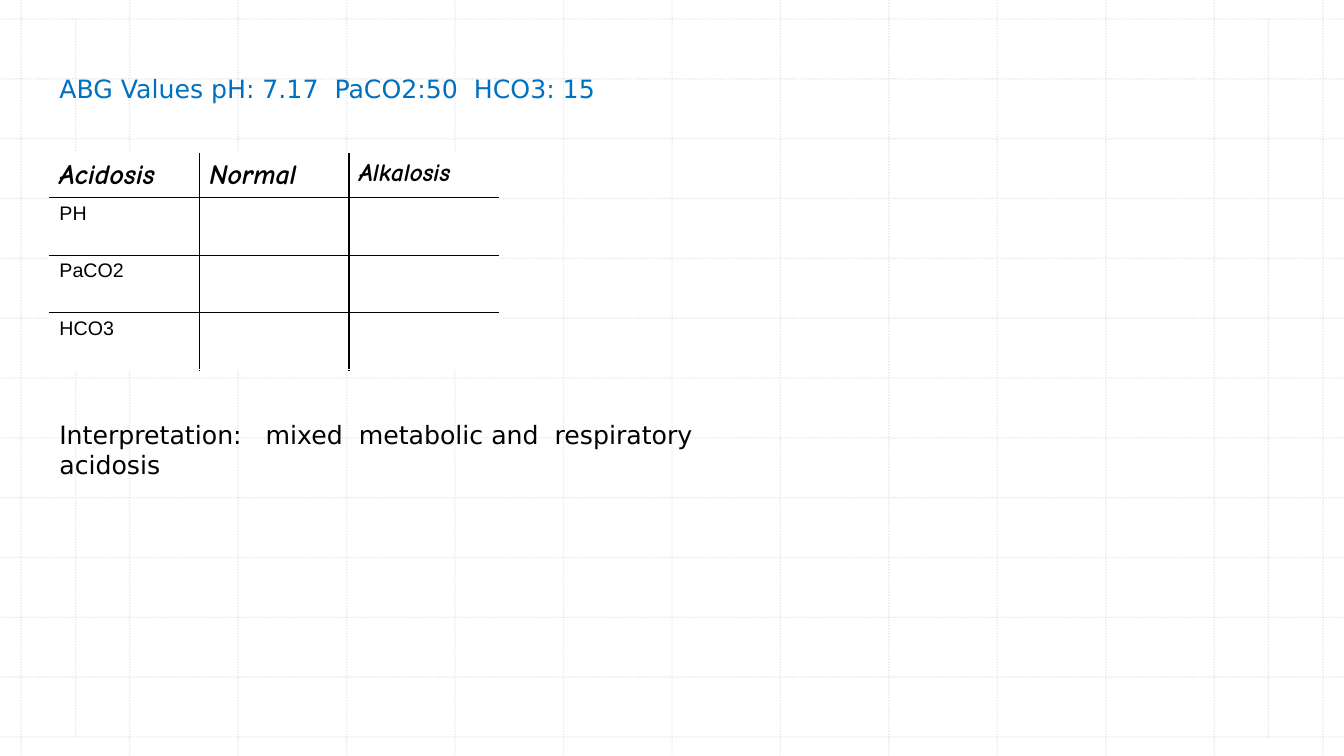
from dataclasses import dataclass

from lxml.etree import SubElement
from pptx import Presentation
from pptx.dml.color import RGBColor
from pptx.enum.dml import MSO_LINE
from pptx.enum.shapes import MSO_CONNECTOR
from pptx.enum.text import MSO_AUTO_SIZE
from pptx.oxml import parse_xml
from pptx.oxml.ns import nsdecls, qn
from pptx.util import Pt


@dataclass(frozen=True)
class Theme:
    """Colours, type styles and line weight of the slide."""
    paper: str = "FFFFFF"
    ink: str = "000000"
    accent: str = "0070C0"
    grid: str = "BCBCBC"
    grid_alpha: str = "30000"
    rule: float = 1

    def statement(self):
        """Return the format of the two lines of running text."""
        return {"name": "DejaVu Sans", "size": Pt(18)}

    def heading(self, size):
        """Return the format of a column heading."""
        return {"name": "Comic Neue", "size": Pt(size), "bold": True, "italic": True}

    def label(self):
        """Return the format of a row label."""
        return {"name": "Arial", "size": Pt(14), "bold": False, "italic": False}


THEME = Theme()
SLIDE_WIDTH, SLIDE_HEIGHT = 960, 540


def write(paragraph, words, formats, colour):
    """Add one formatted run to a paragraph."""
    run = paragraph.add_run()
    run.text = words
    for attribute, value in formats.items():
        setattr(run.font, attribute, value)
    run.font.color.rgb = RGBColor.from_string(colour)


def draw_grid_line(slide, start_x, start_y, end_x, end_y):
    """Draw one faint dotted line of the background grid."""
    grid_line = slide.shapes.add_connector(
        MSO_CONNECTOR.STRAIGHT, Pt(start_x), Pt(start_y), Pt(end_x), Pt(end_y))
    grid_line.line.color.rgb = RGBColor.from_string(THEME.grid)
    for attribute, value in {"width": Pt(THEME.rule), "dash_style": MSO_LINE.ROUND_DOT}.items():
        setattr(grid_line.line, attribute, value)
    properties = grid_line._element.spPr
    SubElement(properties.find(".//" + qn("a:srgbClr")), qn("a:alpha"), val=THEME.grid_alpha)
    SubElement(properties, qn("a:effectLst"))


def draw_grid(slide, left, top, width, height):
    """Fill a box with the background grid and its two inner margins."""
    edge_x, edge_y, margin, steps = 15.12, 13.6, 54, 12
    step_x = (width - 2 * edge_x) / steps
    step_y = (height - 2 * edge_y) / steps
    right, bottom = left + width, top + height
    for step in range(steps + 1):
        column_x = left + edge_x + step * step_x
        row_y = top + edge_y + step * step_y
        draw_grid_line(slide, column_x, top, column_x, bottom)
        draw_grid_line(slide, left, row_y, right, row_y)
    for margin_x in (left + margin, right - margin):
        draw_grid_line(slide, margin_x, top + edge_y, margin_x, bottom - edge_y)


def add_statement(slide, left, top, width, height, words, colour):
    """Place a line of running text in its box."""
    statement = slide.shapes.add_textbox(Pt(left), Pt(top), Pt(width), Pt(height))
    frame = statement.text_frame
    for attribute, value in {"word_wrap": True, "auto_size": MSO_AUTO_SIZE.SHAPE_TO_FIT_TEXT}.items():
        setattr(frame, attribute, value)
    write(frame.paragraphs[0], words, THEME.statement(), colour)


def rule_cell(cell, outer_sides):
    """Fill a cell and rule it, with outer sides in the paper colour."""
    cell.fill.solid()
    cell.fill.fore_color.rgb = RGBColor.from_string(THEME.paper)
    properties = cell._tc.get_or_add_tcPr()
    for position, side in enumerate("LRTB"):
        colour = THEME.paper if side in outer_sides else THEME.ink
        properties.insert(position, parse_xml(
            f'<a:ln{side} {nsdecls("a")} w="{Pt(THEME.rule)}"><a:solidFill>'
            f'<a:srgbClr val="{colour}"/></a:solidFill></a:ln{side}>'))


def add_balance_table(slide, left, top, width, height):
    """Place the acid-base table with open outer edges."""
    headings = (("Acidosis", 20), ("Normal", 20), ("Alkalosis", 18))
    measures = ("PH", "PaCO2", "HCO3")
    heading_height = 30.8
    row_count, column_count = len(measures) + 1, len(headings)
    balance = slide.shapes.add_table(
        row_count, column_count, Pt(left), Pt(top), Pt(width), Pt(height)).table
    for flag, state in {"first_row": False, "horz_banding": False}.items():
        setattr(balance, flag, state)
    for column in balance.columns:
        column.width = Pt(width / column_count)
    for index, row in enumerate(balance.rows):
        row.height = Pt((height - heading_height) / len(measures) if index else heading_height)
        for place, cell in enumerate(row.cells):
            sides = {"T": index == 0, "B": index == row_count - 1,
                     "L": place == 0, "R": place == column_count - 1}
            rule_cell(cell, [side for side, outer in sides.items() if outer])
    for place, (heading, size) in enumerate(headings):
        write(balance.cell(0, place).text_frame.paragraphs[0], heading, THEME.heading(size), THEME.ink)
    for index, measure in enumerate(measures, 1):
        write(balance.cell(index, 0).text_frame.paragraphs[0], measure, THEME.label(), THEME.ink)


def build_case_slide(deck):
    """Build the blood gas case on a blank slide."""
    slide = deck.slides.add_slide(deck.slide_layouts[6])
    slide.background.fill.solid()
    slide.background.fill.fore_color.rgb = RGBColor.from_string(THEME.paper)
    left, text_width, text_height = 35.3, 481.7, 29
    draw_grid(slide, 0, 0, SLIDE_WIDTH, SLIDE_HEIGHT)
    add_statement(slide, left, 49, text_width, text_height,
                  "ABG Values pH: 7.17  PaCO2:50  HCO3: 15", THEME.accent)
    add_balance_table(slide, left, 110, 321, 153.8)
    add_statement(slide, left, 296, text_width, text_height,
                  "Interpretation:   mixed  metabolic and  respiratory acidosis", THEME.ink)


def main():
    """Create and save the presentation."""
    deck = Presentation()
    for attribute, value in {"slide_width": SLIDE_WIDTH, "slide_height": SLIDE_HEIGHT}.items():
        setattr(deck, attribute, Pt(value))
    build_case_slide(deck)
    deck.save("out.pptx")


if __name__ == "__main__":
    main()
